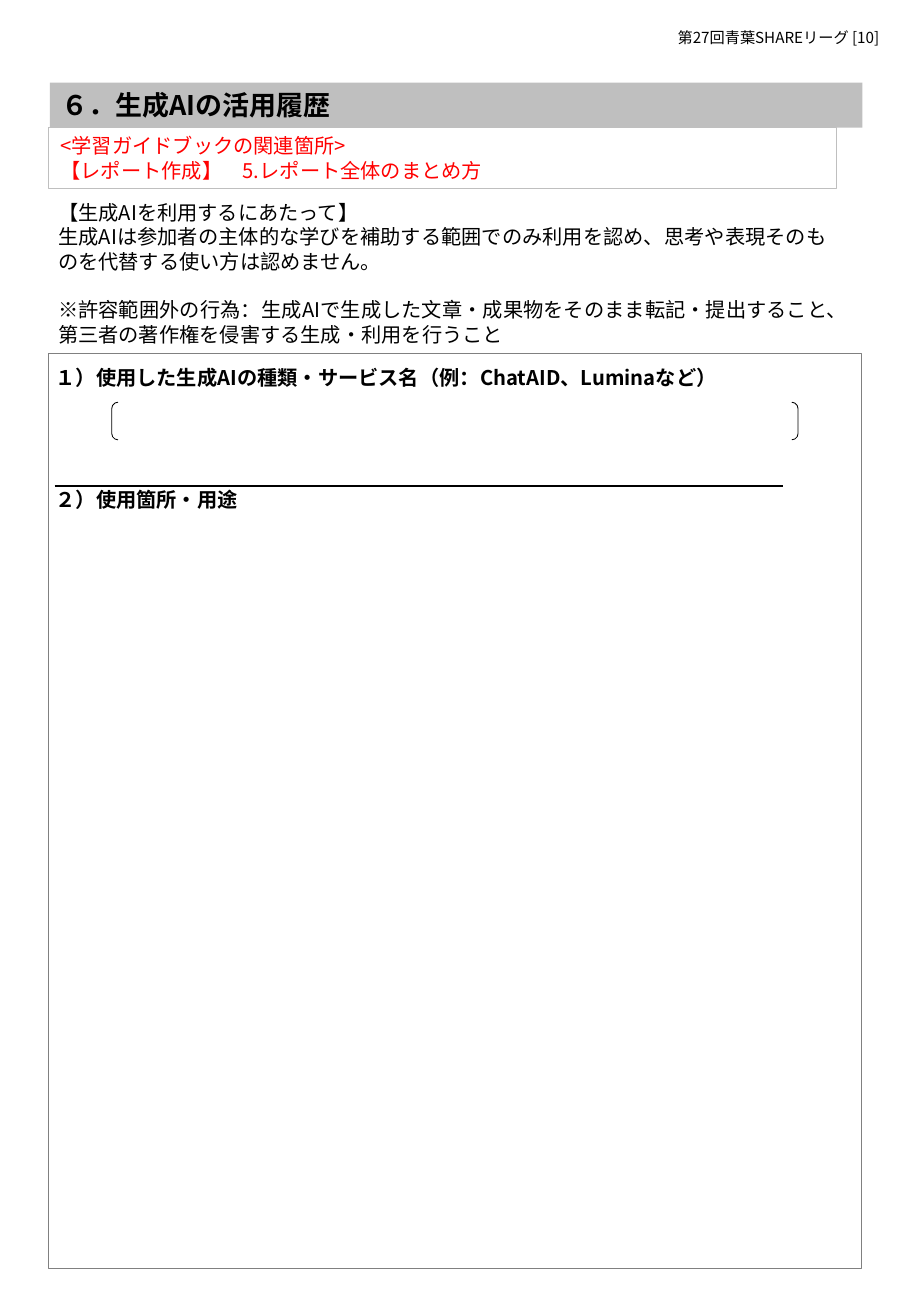
from lxml.etree import SubElement
from pptx import Presentation
from pptx.dml.color import RGBColor
from pptx.enum.shapes import MSO_CONNECTOR, MSO_SHAPE
from pptx.enum.text import MSO_ANCHOR, MSO_AUTO_SIZE, PP_ALIGN
from pptx.oxml.ns import qn
from pptx.util import Inches, Pt

FONT = "Noto Sans CJK JP"
LINE_HEIGHT = 1.2
BODY_LINE = 12 * LINE_HEIGHT


def color(hex_value):
    return RGBColor.from_string(hex_value)


def place(shape, left, top, width, height):
    shape.left, shape.top = Inches(left), Inches(top)
    shape.width, shape.height = Inches(width), Inches(height)


def write(shape, *lines, size=12, text_color="000000", bold=False,
          align=PP_ALIGN.JUSTIFY, anchor=MSO_ANCHOR.TOP, wrap=True, gaps=None):
    """Write one paragraph per line; gaps maps a line index to points before it."""
    frame = shape.text_frame
    frame.auto_size = MSO_AUTO_SIZE.NONE
    frame.word_wrap = wrap
    frame.vertical_anchor = anchor
    for index, line in enumerate(lines):
        paragraph = frame.paragraphs[0] if index == 0 else frame.add_paragraph()
        paragraph.alignment = align
        paragraph.line_spacing = Pt(size * LINE_HEIGHT)
        if gaps and index in gaps:
            paragraph.space_before = Pt(gaps[index])
        run = paragraph.add_run()
        run.text = line
        run.font.name = FONT
        run.font.size = Pt(size)
        run.font.bold = bold
        run.font.color.rgb = color(text_color)
        SubElement(run.font._element, qn("a:ea")).set("typeface", FONT)


def add_text(slide, box, *lines, **text_format):
    shape = slide.shapes.add_textbox(*map(Inches, box))
    write(shape, *lines, **text_format)


def add_outline(slide, kind, box, line_color, line_width):
    shape = slide.shapes.add_shape(kind, *map(Inches, box))
    shape.shadow.inherit = False
    shape.fill.background()
    shape.line.color.rgb = color(line_color)
    shape.line.width = Pt(line_width)
    return shape


def add_rule(slide, left, right, top):
    rule = slide.shapes.add_connector(
        MSO_CONNECTOR.STRAIGHT, Inches(left), Inches(top), Inches(right), Inches(top))
    rule.line.color.rgb = color("000000")
    rule.line.width = Pt(0.75)
    SubElement(rule._element.spPr, qn("a:effectLst"))


def format_title(slide):
    title = slide.shapes.title
    place(title, 0.41, 0.68, 6.69, 0.37)
    title.fill.solid()
    title.fill.fore_color.rgb = color("BFBFBF")
    write(title, "６．生成AIの活用履歴", size=16, bold=True,
          align=PP_ALIGN.LEFT, anchor=MSO_ANCHOR.MIDDLE)


def main():
    presentation = Presentation()
    presentation.slide_width = Inches(7.5)
    presentation.slide_height = Inches(10.83)
    slide = presentation.slides.add_slide(presentation.slide_layouts[5])

    format_title(slide)
    add_text(slide, (5.48, 0.18, 2.02, 0.25), "第27回青葉SHAREリーグ [10]",
             size=9, align=PP_ALIGN.LEFT, wrap=False)

    add_outline(slide, MSO_SHAPE.RECTANGLE, (0.4, 2.91, 6.69, 7.53), "808080", 0.5)
    add_text(slide, (0.36, 2.96, 6.53, 1.31),
             "１）使用した生成AIの種類・サービス名（例：ChatAID、Luminaなど）",
             "２）使用箇所・用途",
             bold=True, gaps={1: 4 * BODY_LINE})
    add_rule(slide, 0.45, 6.45, 4)
    add_text(slide, (0.38, 1.6, 6.53, 1.31),
             "【生成AIを利用するにあたって】",
             "生成AIは参加者の主体的な学びを補助する範囲でのみ利用を認め、"
             "思考や表現そのものを代替する使い方は認めません。",
             "※許容範囲外の行為：生成AIで生成した文章・成果物をそのまま転記・提出すること、"
             "第三者の著作権を侵害する生成・利用を行うこと",
             gaps={2: BODY_LINE})
    add_outline(slide, MSO_SHAPE.DOUBLE_BRACKET, (0.92, 3.31, 5.65, 0.31), "000000", 0.5)

    guide = add_outline(slide, MSO_SHAPE.RECTANGLE, (0.4, 1.05, 6.49, 0.5), "BFBFBF", 0.75)
    write(guide, "<学習ガイドブックの関連箇所>",
          "【レポート作成】　5.レポート全体のまとめ方",
          text_color="FF0000", anchor=MSO_ANCHOR.MIDDLE)

    presentation.save("out.pptx")


if __name__ == "__main__":
    main()
